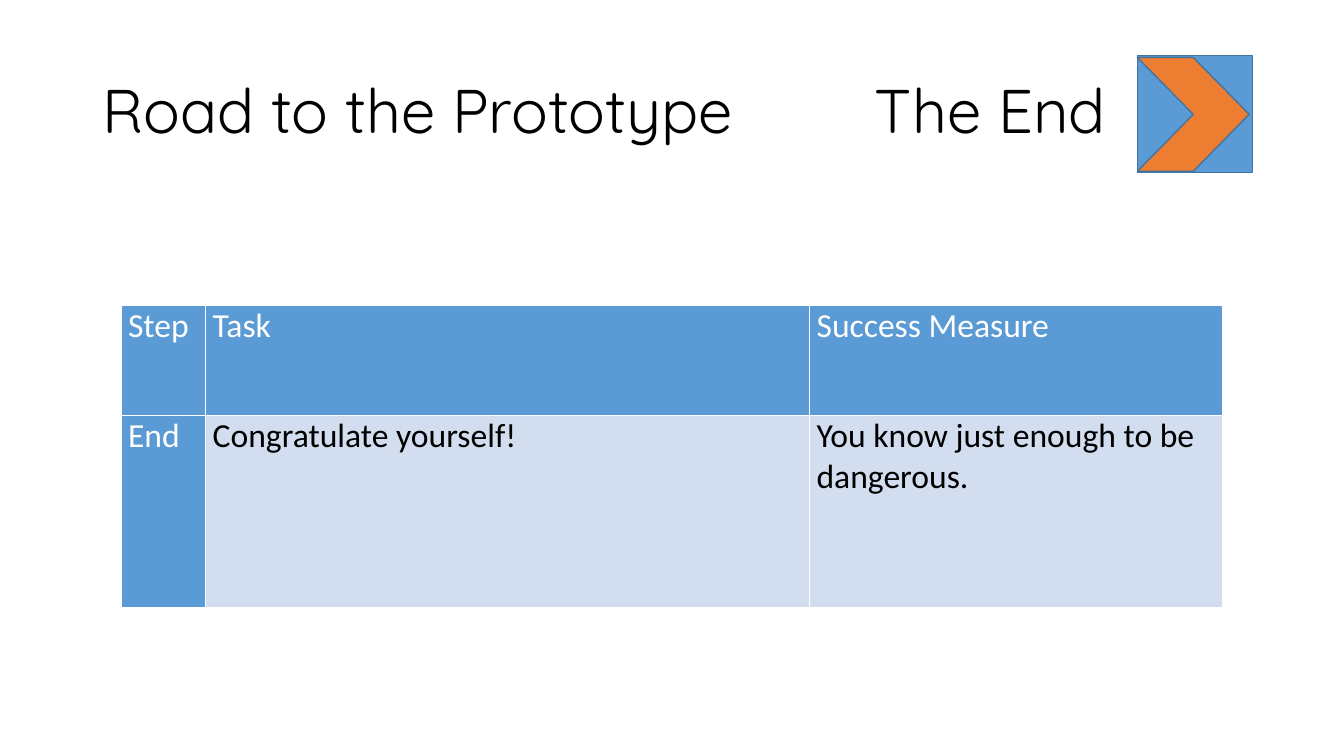
from dataclasses import dataclass

from lxml.etree import SubElement
from pptx import Presentation
from pptx.dml.color import RGBColor
from pptx.enum.shapes import MSO_SHAPE
from pptx.enum.text import MSO_ANCHOR
from pptx.oxml.ns import qn
from pptx.util import Inches, Pt


@dataclass(frozen=True)
class Theme:
    blue: str = "5B9BD5"
    edge: str = "43739E"
    orange: str = "ED7D31"
    pale: str = "D2DEEF"
    black: str = "000000"
    white: str = "FFFFFF"
    title_font: str = "Quicksand"
    body_font: str = "Calibri"
    title_size: int = 44
    body_size: int = 24
    line: int = 1


def set_all(obj, values):
    for name, value in values.items():
        setattr(obj, name, value)


def paint(fill, color):
    fill.solid()
    fill.fore_color.rgb = RGBColor.from_string(color)


class SlideBuilder:
    def __init__(self, slide, theme):
        self.slide, self.theme = slide, theme

    def add_text(self, p, text, font, size, color):
        r = p.add_run()
        r.text = text
        set_all(r.font, {"name": font, "size": Pt(size), "bold": False})
        r.font.color.rgb = RGBColor.from_string(color)

    def title(self, box, text, tab):
        """Add the heading, with a tab stop at `tab` inches from its text edge."""
        t = self.theme
        tf = self.slide.shapes.add_textbox(*map(Inches, box)).text_frame
        set_all(tf, {"word_wrap": True, "vertical_anchor": MSO_ANCHOR.MIDDLE})
        p = tf.paragraphs[0]
        p.line_spacing = 0.9
        tabs = SubElement(p._p.get_or_add_pPr(), qn("a:tabLst"))
        SubElement(tabs, qn("a:tab"), pos=str(Inches(tab)), algn="l")
        self.add_text(p, text, t.title_font, t.title_size, t.black)

    def icon(self, parts):
        """Group preset shapes given as (kind, box, fill)."""
        group = self.slide.shapes.add_group_shape()
        for kind, box, fill in parts:
            sp = group.shapes.add_shape(kind, *map(Inches, box))
            sp.shadow.inherit = False
            paint(sp.fill, fill)
            paint(sp.line.fill, self.theme.edge)
            sp.line.width = Pt(self.theme.line)

    def borders(self, cell):
        tcPr = cell._tc.get_or_add_tcPr()
        for i, side in enumerate(("lnL", "lnR", "lnT", "lnB")):
            ln = tcPr.makeelement(qn(f"a:{side}"), {"w": str(Pt(self.theme.line))})
            fill = SubElement(ln, qn("a:solidFill"))
            SubElement(fill, qn("a:srgbClr"), val=self.theme.white)
            tcPr.insert(i, ln)

    def table(self, box, widths, heights, rows):
        """Add a table whose first row and first column are headers."""
        t = self.theme
        table = self.slide.shapes.add_table(
            len(rows), len(widths), *map(Inches, box)).table
        for col, width in zip(table.columns, widths):
            col.width = Inches(width)
        for row, height in zip(table.rows, heights):
            row.height = Inches(height)
        for i, texts in enumerate(rows):
            for j, text in enumerate(texts):
                cell = table.cell(i, j)
                header = i == 0 or j == 0
                set_all(cell, {"margin_left": Inches(0.07), "margin_right": Inches(0.07),
                               "margin_top": 0, "margin_bottom": 0})
                paint(cell.fill, t.blue if header else t.pale)
                self.borders(cell)
                self.add_text(cell.text_frame.paragraphs[0], text, t.body_font,
                              t.body_size, t.white if header else t.black)


def main():
    prs = Presentation()
    set_all(prs, {"slide_width": Inches(13.33), "slide_height": Inches(7.5)})
    theme = Theme()
    s = SlideBuilder(prs.slides.add_slide(prs.slide_layouts[6]), theme)
    s.icon([
        (MSO_SHAPE.ACTION_BUTTON_CUSTOM, (11.28, 0.55, 1.14, 1.16), theme.blue),
        (MSO_SHAPE.CHEVRON, (11.28, 0.57, 1.11, 1.13), theme.orange),
    ])
    s.title((0.92, 0.4, 11.5, 1.45), "Road to the Prototype\tThe End", tab=7.66)
    s.table((1.2, 3.03, 10.93, 3), (0.84, 5.99, 4.1), (1.09, 1.91), [
        ("Step", "Task", "Success Measure"),
        ("End", "Congratulate yourself!", "You know just enough to be dangerous."),
    ])
    prs.save("out.pptx")


if __name__ == "__main__":
    main()
